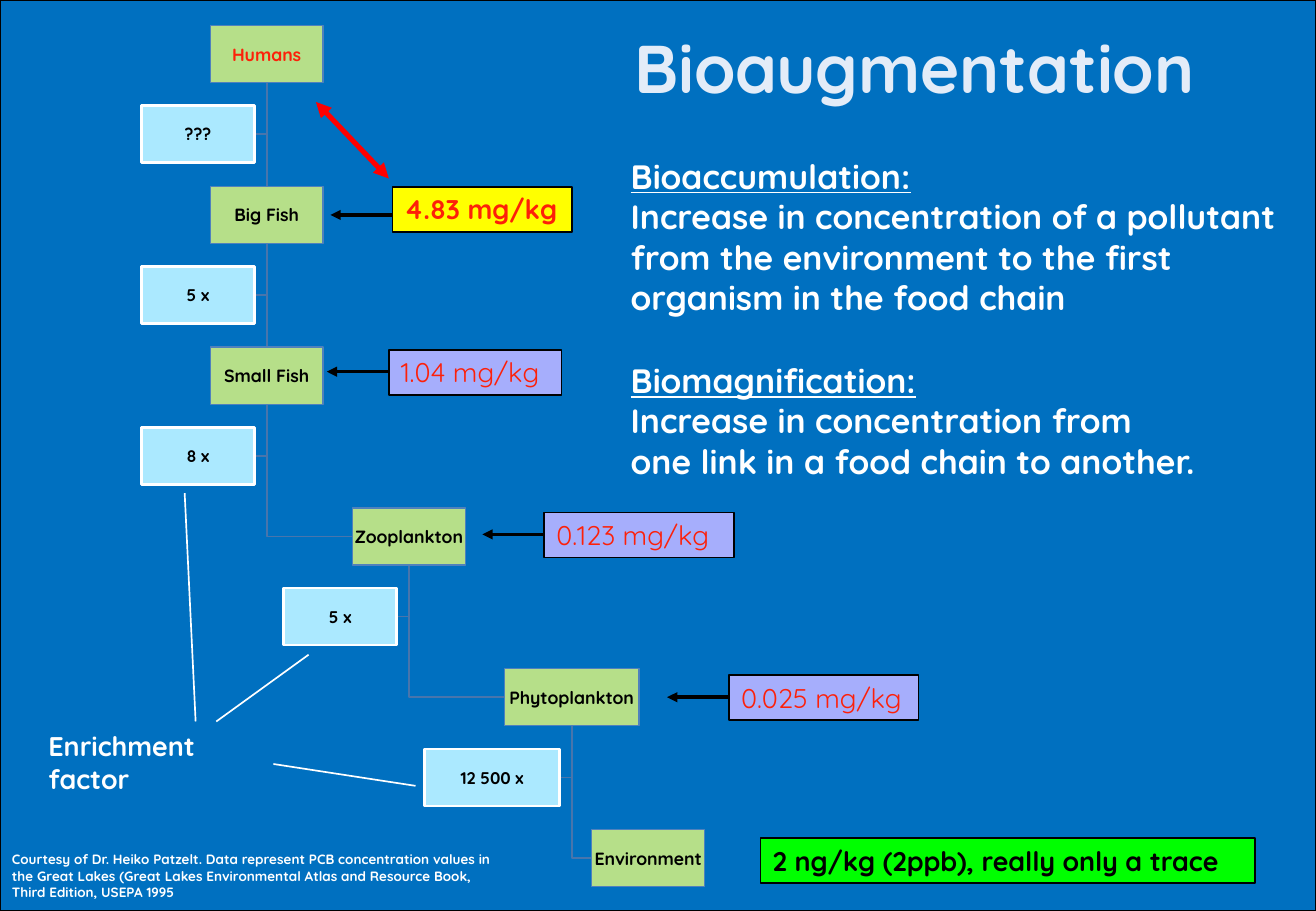
from collections import namedtuple
from lxml.etree import SubElement
from pptx import Presentation
from pptx.dml.color import RGBColor
from pptx.enum.shapes import MSO_CONNECTOR, MSO_SHAPE
from pptx.enum.text import MSO_ANCHOR, MSO_AUTO_SIZE, PP_ALIGN
from pptx.oxml.ns import qn
from pptx.util import Inches, Pt

Box = namedtuple("Box", "left top width height")
FONT = "Quicksand"
COLORS = {
    "background": "0070C0", "black": "000000", "white": "FFFFFF",
    "title": "E3ECF8", "red_text": "FD2009", "red_arrow": "FF0000",
    "organism": "B6DF89", "organism_line": "4F81BD", "stem": "4875AC",
    "factor": "ABE9FF", "lilac": "A6AEFC", "yellow": "FFFF00", "green": "00FF00",
}
LEVEL_STEP = 1.324
FACTOR_DROP = 0.66
CELL_HEIGHT = 0.47
ORGANISMS = [
    ("Humans", 1.73, 0.93, "???"),
    ("Big Fish", 1.73, 0.93, "5 x"),
    ("Small Fish", 1.73, 0.93, "8 x"),
    ("Zooplankton", 2.9, 0.93, "5 x"),
    ("Phytoplankton", 4.15, 1.11, "12 500 x"),
    ("Environment", 4.87, 0.93, None),
]
CONCENTRATIONS = [
    ("4.83 mg/kg", Box(3.23, 1.54, 1.48, 0.37), "yellow", True, 0.23),
    ("1.04 mg/kg", Box(3.2, 2.88, 1.42, 0.37), "lilac", False, 0.18),
    ("0.123 mg/kg", Box(4.48, 4.22, 1.56, 0.37), "lilac", False, 0.18),
    ("0.025 mg/kg", Box(6, 5.56, 1.56, 0.37), "lilac", False, 0.18),
]
DEFINITIONS = [
    ("Bioaccumulation:", "Increase in concentration of a pollutant from the "
     "environment to the first organism in the food chain"),
    ("Biomagnification:", "Increase in concentration from\v"
     "one link in a food chain to another."),
]
COURTESY = ("Courtesy of Dr. Heiko Patzelt. Data represent PCB concentration values in "
            "the Great Lakes (Great Lakes Environmental Atlas and Resource Book, "
            "Third Edition, USEPA 1995")


def rgb(name):
    return RGBColor.from_string(COLORS[name])


def inches(values):
    return [Inches(value) for value in values]


def format_runs(para, size, color, bold=True, underline=False):
    for span in para.runs:
        span.font.name = FONT
        span.font.size = Pt(size)
        span.font.bold = bold
        span.font.underline = underline
        span.font.color.rgb = rgb(color)


def set_line(shape, color, width):
    shape.line.color.rgb = rgb(color)
    shape.line.width = Pt(width)


def add_box(slide, box, fill, line, width):
    shape = slide.shapes.add_shape(MSO_SHAPE.RECTANGLE, *inches(box))
    shape.shadow.inherit = False
    if fill:
        shape.fill.solid()
        shape.fill.fore_color.rgb = rgb(fill)
    else:
        shape.fill.background()
    set_line(shape, line, width)
    return shape


def add_line(slide, start, end, color, width, heads=()):
    line = slide.shapes.add_connector(MSO_CONNECTOR.STRAIGHT, *inches(start + end))
    set_line(line, color, width)
    for head in heads:
        SubElement(line.line._get_or_add_ln(), qn("a:" + head), type="triangle")
    SubElement(line._element.spPr, qn("a:effectLst"))


def add_elbow(slide, start, corner, end):
    builder = slide.shapes.build_freeform(*inches(start))
    builder.add_line_segments([inches(corner), inches(end)], close=False)
    elbow = builder.convert_to_shape()
    elbow.shadow.inherit = False
    elbow.fill.background()
    set_line(elbow, "stem", 1)


def add_cell(slide, box, text, fill, line, width, size, color):
    cell = add_box(slide, box, fill, line, width)
    frame = cell.text_frame
    frame.margin_left = frame.margin_right = frame.margin_top = frame.margin_bottom = Inches(0.01)
    frame.vertical_anchor = MSO_ANCHOR.MIDDLE
    frame.word_wrap = False
    frame.text = text
    para = frame.paragraphs[0]
    para.alignment = PP_ALIGN.CENTER
    format_runs(para, size, color)


def add_food_chain(slide, top):
    tops = [top + LEVEL_STEP * level for level in range(len(ORGANISMS))]
    for level, (_, left, width, factor) in enumerate(ORGANISMS[:-1]):
        stem = left + width / 2
        stem_top = tops[level] + CELL_HEIGHT
        factor_middle = tops[level] + FACTOR_DROP + CELL_HEIGHT / 2
        add_line(slide, (stem, factor_middle), (stem - 0.1, factor_middle), "stem", 1)
        next_left, next_top = ORGANISMS[level + 1][1], tops[level + 1]
        if next_left == left:
            add_line(slide, (stem, stem_top), (stem, next_top), "stem", 1)
        else:
            next_middle = next_top + CELL_HEIGHT / 2
            add_elbow(slide, (stem, stem_top), (stem, next_middle), (next_left, next_middle))
        factor_box = Box(stem - 0.1 - width, tops[level] + FACTOR_DROP, width, CELL_HEIGHT)
        add_cell(slide, factor_box, factor, "factor", "white", 1.5, 10, "black")
    for (name, left, width, _), cell_top in zip(ORGANISMS, tops):
        color = "red_text" if name == "Humans" else "black"
        add_cell(slide, Box(left, cell_top, width, CELL_HEIGHT), name,
                 "organism", "organism_line", 0.75, 10.5, color)


def add_value(slide, box, text, fill, color, bold):
    value = add_box(slide, box, fill, "black", 1)
    frame = value.text_frame
    frame.word_wrap = True
    frame.margin_right = 0
    frame.vertical_anchor = MSO_ANCHOR.TOP
    frame.text = text
    frame.paragraphs[0].alignment = PP_ALIGN.LEFT
    format_runs(frame.paragraphs[0], 16, color, bold)


def add_concentrations(slide):
    for text, box, fill, bold, arrow_drop in CONCENTRATIONS:
        add_value(slide, box, text, fill, "red_text", bold)
        arrow_top = box.top + arrow_drop
        add_line(slide, (box.left, arrow_top), (box.left - 0.51, arrow_top),
                 "black", 2, ["tailEnd"])
    add_line(slide, (2.6, 0.84), (3.2, 1.47), "red_arrow", 3, ["headEnd", "tailEnd"])
    add_value(slide, Box(6.26, 6.9, 4.07, 0.37), "2 ng/kg (2ppb), really only a trace",
              "green", "black", True)


def add_note(slide, box, text, size):
    note = slide.shapes.add_textbox(*inches(box))
    note.text_frame.word_wrap = True
    note.text_frame.text = text
    format_runs(note.text_frame.paragraphs[0], size, "white")


def add_enrichment_label(slide, box):
    add_note(slide, box, "Enrichment factor", 16)
    for start, end in [((2.25, 6.29), (3.42, 6.47)), ((2.54, 5.39), (1.78, 5.94)),
                       ((1.52, 4.06), (1.61, 5.94))]:
        add_line(slide, start, end, "white", 1)


def place(shape, box):
    shape.left, shape.top, shape.width, shape.height = inches(box)
    shape.text_frame.auto_size = MSO_AUTO_SIZE.NONE
    shape.text_frame.word_wrap = True


def fill_title(title, box):
    place(title, box)
    title.text_frame.text = "Bioaugmentation"
    title.text_frame.vertical_anchor = MSO_ANCHOR.MIDDLE
    format_runs(title.text_frame.paragraphs[0], 40, "title")


def fill_definitions(body, box):
    place(body, box)
    frame = body.text_frame
    for index, (term, meaning) in enumerate(DEFINITIONS):
        for text, is_term in [(term, True), (meaning, False)]:
            first = index == 0 and is_term
            para = frame.paragraphs[0] if first else frame.add_paragraph()
            para.text = text
            properties = para._p.get_or_add_pPr()
            properties.set("marL", "0")
            properties.set("indent", "0")
            SubElement(properties, qn("a:buNone"))
            para.space_before = Pt(25 if is_term and not first else 0)
            format_runs(para, 20, "white", underline=is_term)


def main():
    deck = Presentation()
    deck.slide_width, deck.slide_height = Inches(10.83), Inches(7.5)
    slide = deck.slides.add_slide(deck.slide_layouts[1])
    slide.background.fill.solid()
    slide.background.fill.fore_color.rgb = rgb("background")
    add_box(slide, Box(0, 0, 10.83, 7.5), None, "black", 0.75)
    fill_title(slide.shapes.title, Box(4.56, 0, 5.93, 1.1))
    fill_definitions(slide.placeholders[1], Box(5.09, 1.23, 5.74, 2.79))
    add_food_chain(slide, 0.21)
    add_concentrations(slide)
    add_enrichment_label(slide, Box(0.3, 5.96, 1.7, 0.64))
    add_note(slide, Box(0, 6.96, 4.15, 0.51), COURTESY, 8)
    deck.save("out.pptx")


if __name__ == "__main__":
    main()
